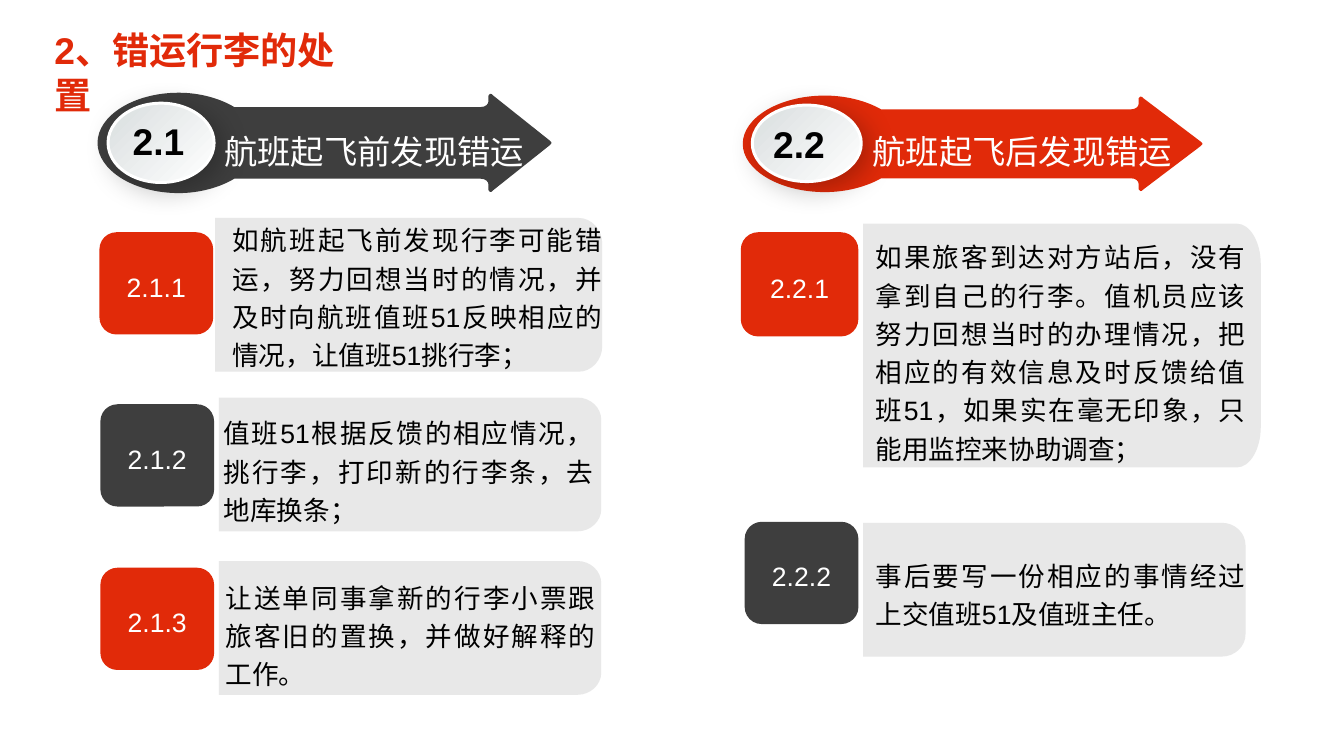
from lxml.etree import SubElement
from pptx import Presentation
from pptx.dml.color import RGBColor
from pptx.enum.shapes import MSO_SHAPE
from pptx.enum.text import MSO_ANCHOR, MSO_AUTO_SIZE, PP_ALIGN
from pptx.oxml.ns import qn
from pptx.util import Inches, Pt

COLORS = {
    "red": "E12A09", "dark": "3E3E3E", "panel": "E6E6E6", "white": "FFFFFF",
    "black": "000000", "silver": "D9DEDF",
}
LINE_HEIGHT = 0.405
ARROW_WIDTH, ARROW_HEIGHT = 4.76, 1.05
# Upper half of the banner arrow: a cubic curve has three points, a line has one.
ARROW_START = (0, 0.525)
ARROW_STEPS = [
    [(0, 0.24), (0.38, 0), (0.85, 0)],
    [(1.07, 0), (1.28, 0.06), (1.43, 0.15)],
    [(4.01, 0.15)],
    [(4.06, 0.15), (4.09, 0.12), (4.09, 0.09)],
    [(4.09, 0.03)],
    [(4.09, 0.01), (4.12, 0), (4.14, 0.03)],
    [(4.73, 0.5)],
    [(4.74, 0.51), (4.75, 0.52), (4.75, 0.525)],
]


def rgb(name):
    return RGBColor.from_string(COLORS[name])


def inches(box):
    return [Inches(value) for value in box]


def paint(shape, color):
    shape.shadow.inherit = False
    shape.fill.solid()
    shape.fill.fore_color.rgb = rgb(color)
    shape.line.fill.background()


def write(shape, text, size, color, bold=False, align=PP_ALIGN.LEFT,
          spacing=None, margins=(0.1, 0.05)):
    frame = shape.text_frame
    frame.word_wrap = True
    frame.margin_left = frame.margin_right = Inches(margins[0])
    frame.margin_top = frame.margin_bottom = Inches(margins[1])
    paragraph = frame.paragraphs[0]
    paragraph.alignment = align
    if spacing:
        paragraph.line_spacing = spacing
    run = paragraph.add_run()
    run.text = text
    run.font.size = Pt(size)
    run.font.name = "Arial"
    run.font.bold = bold
    run.font.color.rgb = rgb(color)


def add_label(shapes, box, text, size, color, **style):
    label = shapes.add_textbox(*inches(box))
    write(label, text, size, color, **style)
    label.text_frame.auto_size = MSO_AUTO_SIZE.SHAPE_TO_FIT_TEXT


def add_outline(shapes, start, steps, color):
    """Closed outline of lines (one point a step) and cubic curves (three points)."""
    builder = shapes.build_freeform(*inches(start), scale=1.0)
    builder.add_line_segments([inches(step[-1]) for step in steps], close=True)
    shape = builder.convert_to_shape()
    paint(shape, color)
    for line, step in zip(list(shape._element.iter(qn("a:lnTo"))), steps):
        if len(step) == 3:
            line.tag = qn("a:cubicBezTo")
            line.remove(line[0])
            for x, y in step:
                SubElement(line, qn("a:pt"), x=str(Inches(x) - shape.left),
                           y=str(Inches(y) - shape.top))
    return shape


def add_arrow(shapes, box, color):
    left, top, width, height = box

    def place(point):
        return (left + point[0] * width / ARROW_WIDTH,
                top + point[1] * height / ARROW_HEIGHT)

    def mirror(point):
        return point[0], ARROW_HEIGHT - point[1]

    starts = [ARROW_START] + [step[-1] for step in ARROW_STEPS[:-1]]
    lower = [[mirror(point) for point in step[-2::-1] + [start]]
             for start, step in zip(starts, ARROW_STEPS)]
    steps = ARROW_STEPS + lower[::-1]
    add_outline(shapes, place(ARROW_START),
                [[place(point) for point in step] for step in steps], color)


def add_panel(shapes, box):
    """Grey panel with only its right corners rounded."""
    left, top, width, height = box
    right, bottom = left + width, top + height
    radius_x, radius_y = 0.25, height / 6
    pull_x, pull_y = 0.45 * radius_x, 0.45 * radius_y
    steps = [
        [(right - radius_x, top)],
        [(right - pull_x, top), (right, top + pull_y), (right, top + radius_y)],
        [(right, bottom - radius_y)],
        [(right, bottom - pull_y), (right - pull_x, bottom), (right - radius_x, bottom)],
        [(left, bottom)],
    ]
    shape = add_outline(shapes, (left, top), steps, "panel")
    color = shape._element.spPr.find(qn("a:solidFill"))[0]
    SubElement(color, qn("a:alpha"), val="90000")


def add_badge(shapes, box):
    """Silver oval with a soft shadow."""
    oval = shapes.add_shape(MSO_SHAPE.OVAL, *inches(box))
    oval.fill.gradient()
    oval.fill.gradient_angle = 315
    for stop, color, position in zip(oval.fill.gradient_stops, ("silver", "white"), (0, 1)):
        stop.color.rgb = rgb(color)
        stop.position = position
    oval.line.color.rgb = rgb("white")
    oval.line.width = Pt(2.25)
    oval.shadow.inherit = False
    effects = oval._element.spPr.find(qn("a:effectLst"))
    shadow = SubElement(effects, qn("a:outerShdw"), blurRad=str(Pt(22)),
                        dist=str(Pt(6)), dir="2700000", algn="ctr", rotWithShape="0")
    color = SubElement(shadow, qn("a:srgbClr"), val=COLORS["black"])
    SubElement(color, qn("a:alpha"), val="28000")


def add_banner(slide, box, color, badge, number, number_box, heading, heading_box):
    banner = slide.shapes.add_group_shape().shapes
    add_arrow(banner, box, color)
    add_badge(banner, badge)
    add_label(banner, heading_box, heading, 25.1, "white")
    add_label(slide.shapes, number_box, number, 28, "black", bold=True)


def add_entry(slide, panel, number, number_box, color, text, text_offset, lines):
    """Grey panel with its text, and the numbered tile on its left."""
    add_panel(slide.shapes, panel)
    text_box = (panel[0] + text_offset[0], panel[1] + text_offset[1],
                3.87, lines * LINE_HEIGHT)
    add_label(slide.shapes, text_box, text, 20, "black", align=PP_ALIGN.JUSTIFY,
              spacing=1.2, margins=(0, 0))
    tile = slide.shapes.add_shape(MSO_SHAPE.ROUNDED_RECTANGLE, *inches(number_box))
    paint(tile, color)
    tile.text_frame.vertical_anchor = MSO_ANCHOR.MIDDLE
    write(tile, number, 20, "white", align=PP_ALIGN.CENTER, spacing=1.2, margins=(0, 0))


def add_before_takeoff(slide):
    add_banner(slide, (1.02, 0.97, 4.76, 1.05), "dark", (1.13, 1.08, 1.11, 0.83),
               "2.1", (1.29, 1.19, 0.83, 0.57),
               "航班起飞前发现错运", (2.25, 1.32, 3.53, 0.53))
    add_entry(slide, (2.25, 2.28, 4.05, 1.61), "2.1.1", (1.04, 2.43, 1.19, 1.07), "red",
              "如航班起飞前发现行李可能错运，努力回想当时的情况，并及时向航班值班51反映相应的情况，让值班51挑行李；",
              (0.18, 0), 4)
    add_entry(slide, (2.29, 4.16, 4, 1.4), "2.1.2", (1.05, 4.23, 1.19, 1.07), "dark",
              "值班51根据反馈的相应情况，挑行李，打印新的行李条，去地库换条；",
              (0.05, 0.14), 3)
    add_entry(slide, (2.29, 5.87, 4, 1.4), "2.1.3", (1.05, 5.94, 1.19, 1.07), "red",
              "让送单同事拿新的行李小票跟旅客旧的置换，并做好解释的工作。",
              (0.07, 0.15), 3)


def add_after_takeoff(slide):
    add_banner(slide, (7.77, 1, 4.82, 1.01), "red", (7.87, 1.1, 1.14, 0.8),
               "2.2", (7.99, 1.22, 0.99, 0.57),
               "航班起飞后发现错运", (9.03, 1.32, 3.44, 0.53))
    add_entry(slide, (9.03, 2.34, 4.16, 2.55), "2.2.1", (7.75, 2.43, 1.23, 1.09), "red",
              "如果旅客到达对方站后，没有拿到自己的行李。值机员应该努力回想当时的办理情况，把相应的有效信息及时反馈给值班51，如果实在毫无印象，只能用监控来协助调查；",
              (0.13, 0.12), 6)
    add_entry(slide, (9.03, 5.47, 4, 1.4), "2.2.2", (7.79, 5.46, 1.19, 1.07), "dark",
              "事后要写一份相应的事情经过上交值班51及值班主任。",
              (0.13, 0.32), 2)


def main():
    presentation = Presentation()
    presentation.slide_width, presentation.slide_height = Inches(14.06), Inches(7.91)
    slide = presentation.slides.add_slide(presentation.slide_layouts[6])
    add_label(slide.shapes, (0.46, 0.24, 3.53, 0.57), "2、错运行李的处置", 28, "red",
              bold=True, margins=(0.11, 0.05))
    add_before_takeoff(slide)
    add_after_takeoff(slide)
    presentation.save("out.pptx")


if __name__ == "__main__":
    main()
